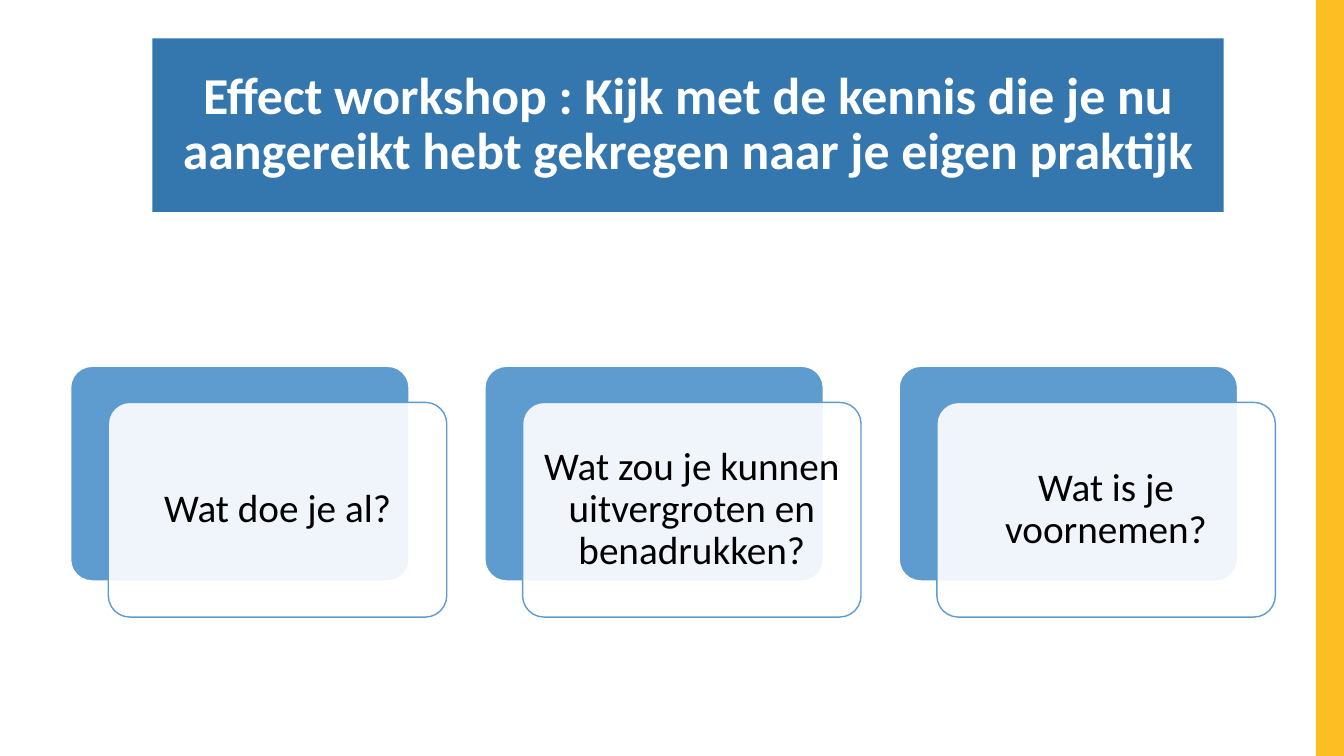
from pptx import Presentation
from pptx.dml.color import RGBColor
from pptx.enum.shapes import MSO_SHAPE
from pptx.enum.text import MSO_ANCHOR, MSO_AUTO_SIZE, PP_ALIGN
from pptx.oxml.ns import qn
from pptx.util import Cm, Pt
from lxml import etree

COLORS = {
    "white": "FFFFFF",
    "black": "000000",
    "banner": "3476AE",
    "card": "5E9BCF",
    "stripe": "FBBF24",
}
FONT = "Calibri"
SLIDE_WIDTH, SLIDE_HEIGHT = 33.87, 19.05
HEADING = ("Effect workshop : Kijk met de kennis die je nu "
           "aangereikt hebt gekregen naar je eigen praktijk")
QUESTIONS = [
    "Wat doe je al?",
    "Wat zou je kunnen uitvergroten en benadrukken?",
    "Wat is je voornemen?",
]


def color(name):
    return RGBColor.from_string(COLORS[name])


def write_centred(frame, text, size, text_color, margin, bold=False):
    frame.text = text
    frame.word_wrap = True
    frame.auto_size = MSO_AUTO_SIZE.NONE
    frame.vertical_anchor = MSO_ANCHOR.MIDDLE
    frame.margin_left = frame.margin_right = Cm(margin)
    frame.margin_top = frame.margin_bottom = Cm(margin)
    paragraph = frame.paragraphs[0]
    paragraph.alignment = PP_ALIGN.CENTER
    paragraph.line_spacing = 0.9
    font = paragraph.runs[0].font
    font.name, font.size, font.bold = FONT, Pt(size), bold
    font.color.rgb = color(text_color)


def add_block(slide, kind, left, top, width, height, fill, outline=None):
    block = slide.shapes.add_shape(
        kind, Cm(left), Cm(top), Cm(width), Cm(height))
    block.shadow.inherit = False
    block.fill.solid()
    block.fill.fore_color.rgb = color(fill)
    if outline:
        block.line.color.rgb = color(outline)
        block.line.width = Pt(1)
    else:
        block.line.fill.background()
    return block


def set_opacity(shape, percent):
    fill_color = shape.fill._xPr.find(qn("a:solidFill"))[0]
    etree.SubElement(fill_color, qn("a:alpha"), val=str(percent * 1000))


def add_stripe(slide, width):
    add_block(slide, MSO_SHAPE.RECTANGLE, SLIDE_WIDTH - width, 0,
              width, SLIDE_HEIGHT, "stripe")


def add_banner(slide, left, top, width, height):
    banner = slide.shapes.title
    banner.left, banner.top = Cm(left), Cm(top)
    banner.width, banner.height = Cm(width), Cm(height)
    banner.fill.solid()
    banner.fill.fore_color.rgb = color("banner")
    write_centred(banner.text_frame, HEADING, 37, "white", 0.2, bold=True)


def add_question_card(slide, question, left, top, width, height):
    """Place a blue card with a translucent white card over it, inside the box."""
    shift_x, shift_y = 0.95, 0.91
    card_width, card_height = width - shift_x, height - shift_y
    back = add_block(slide, MSO_SHAPE.ROUNDED_RECTANGLE, left, top,
                     card_width, card_height, "card", "white")
    front = add_block(slide, MSO_SHAPE.ROUNDED_RECTANGLE,
                      left + shift_x, top + shift_y,
                      card_width, card_height, "white", "card")
    for card in (back, front):
        card.adjustments[0] = 0.1
    set_opacity(front, 90)
    write_centred(front.text_frame, question, 28, "black", 0.3)


def add_question_row(slide, left, top, width, height, gap):
    card_width = (width - gap * (len(QUESTIONS) - 1)) / len(QUESTIONS)
    for index, question in enumerate(QUESTIONS):
        add_question_card(slide, question, left + index * (card_width + gap),
                          top, card_width, height)


def main():
    presentation = Presentation()
    presentation.slide_width = Cm(SLIDE_WIDTH)
    presentation.slide_height = Cm(SLIDE_HEIGHT)
    title_only = presentation.slide_layouts[5]
    slide = presentation.slides.add_slide(title_only)
    add_stripe(slide, 0.71)
    add_banner(slide, 3.84, 0.97, 27, 4.37)
    add_question_row(slide, 1.78, 9.23, 30.36, 6.32, 0.96)
    presentation.save("out.pptx")


if __name__ == "__main__":
    main()
